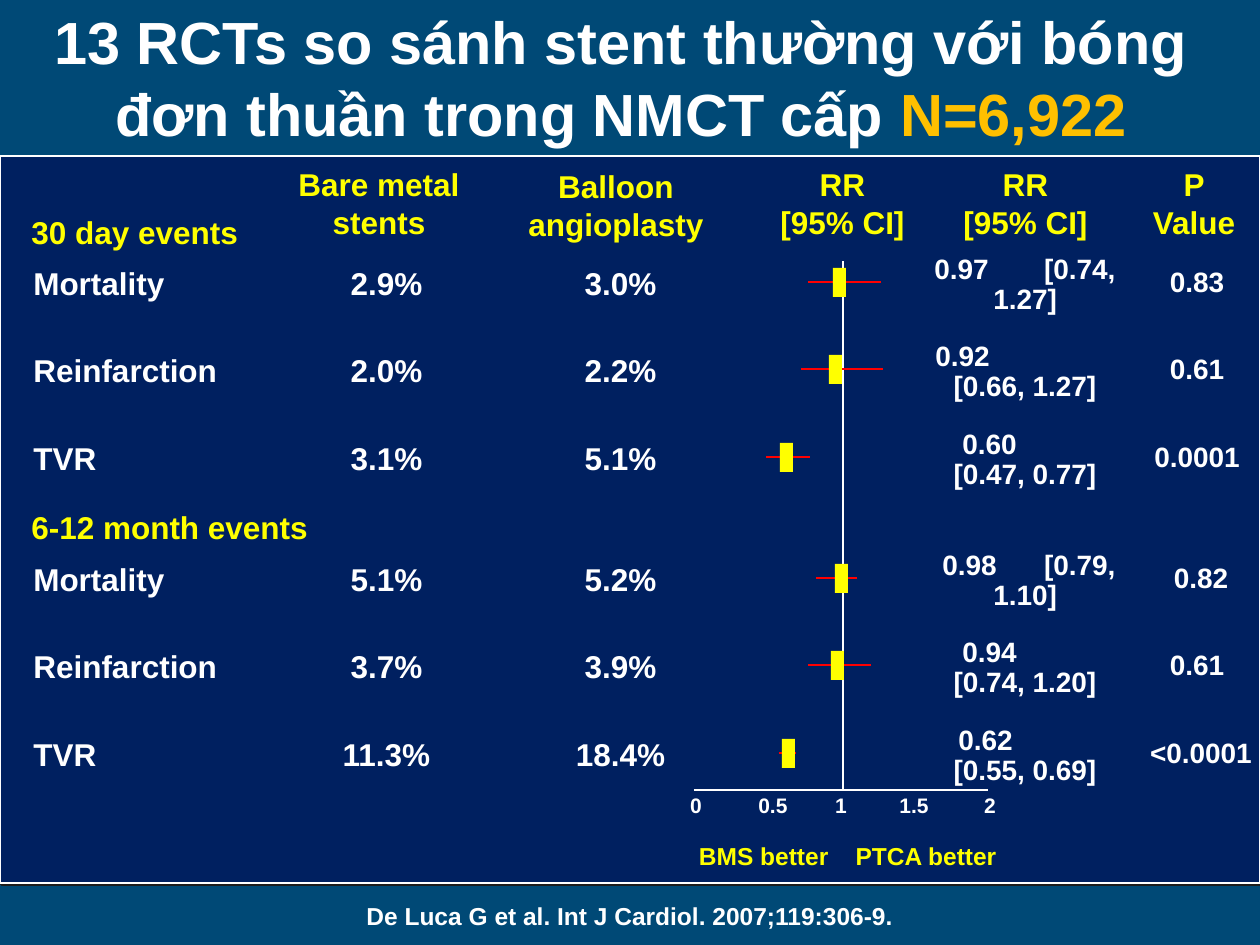
import pptx
import pptx.dml.color
import pptx.enum.shapes
import pptx.enum.text
import pptx.oxml.ns
import pptx.util
from lxml import etree

PX = 914400 // 126
FONT = "Arial"
COLORS = {
    "background": "004976",
    "panel": "002060",
    "shadow": "1C1C1C",
    "white": "FFFFFF",
    "yellow": "FFFF00",
    "gold": "FFC000",
    "red": "FF0000",
}
LEFT = pptx.enum.text.PP_ALIGN.LEFT
CENTER = pptx.enum.text.PP_ALIGN.CENTER
RIGHT = pptx.enum.text.PP_ALIGN.RIGHT
JUSTIFY = pptx.enum.text.PP_ALIGN.JUSTIFY

TITLE = [
    ("13 RCTs so sánh stent thường với bóng đơn thuần trong NMCT cấp ", "white"),
    ("N=6,922", "gold"),
]
HEADERS = [
    (285, 159, 188, ["Bare metal", "stents"]),
    (515, 161, 202, ["Balloon", "angioplasty"]),
    (767, 159, 151, ["RR", "[95% CI]"]),
    (950, 159, 151, ["RR", "[95% CI]"]),
    (1140, 159, 108, ["P", "Value"]),
]
SECTIONS = [
    ("30 day events", 207, 262, [
        ("Mortality", "2.9%", "3.0%", 0, ["0.97 [0.74, 1.27]"], "0.83", 1197, (808, 840, 881)),
        ("Reinfarction", "2.0%", "2.2%", 1, ["0.92", "[0.66, 1.27]"], "0.61", 1197, (801, 836, 883)),
        ("TVR", "3.1%", "5.1%", 28, ["0.60", "[0.47, 0.77]"], "0.0001", 1197, (766, 787, 810)),
    ]),
    ("6-12 month events", 502, 558, [
        ("Mortality", "5.1%", "5.2%", 8, ["0.98 [0.79, 1.10]"], "0.82", 1201, (816, 842, 857)),
        ("Reinfarction", "3.7%", "3.9%", 28, ["0.94", "[0.74, 1.20]"], "0.61", 1197, (808, 838, 871)),
        ("TVR", "11.3%", "18.4%", 24, ["0.62", "[0.55, 0.69]"], "<0.0001", 1201, (779, 789, 796)),
    ]),
]
AXIS_TICKS = [("0", 696), ("0.5", 773), ("1", 841), ("1.5", 914), ("2", 990)]


def px(*lengths):
    return [length * PX for length in lengths]


def rgb(color):
    return pptx.dml.color.RGBColor.from_string(COLORS[color])


def add_run(paragraph, words, size, color):
    run = paragraph.add_run()
    run.text = words
    run.font.name = FONT
    run.font.size = pptx.util.Pt(size)
    run.font.bold = True
    run.font.color.rgb = rgb(color)


def add_text(slide, left, top, width, height, lines, size, color="white",
             align=CENTER, wrap=False, spacing=1.0):
    box = slide.shapes.add_textbox(*px(left, top, width, height))
    frame = box.text_frame
    frame.word_wrap = wrap
    frame.auto_size = pptx.enum.text.MSO_AUTO_SIZE.SHAPE_TO_FIT_TEXT
    for index, line in enumerate(lines):
        paragraph = frame.add_paragraph() if index else frame.paragraphs[0]
        paragraph.alignment = align
        paragraph.line_spacing = spacing
        add_run(paragraph, line, size, color)
    return frame


def add_line(slide, x1, y1, x2, y2, color):
    line = slide.shapes.add_connector(
        pptx.enum.shapes.MSO_CONNECTOR.STRAIGHT, *px(x1, y1, x2, y2))
    line.line.color.rgb = rgb(color)
    line.line.width = pptx.util.Pt(0.75)
    etree.SubElement(line._element.spPr, pptx.oxml.ns.qn("a:effectLst"))


def add_rect(slide, left, top, width, height, color):
    rect = slide.shapes.add_shape(
        pptx.enum.shapes.MSO_SHAPE.RECTANGLE, *px(left, top, width, height))
    rect.shadow.inherit = False
    rect.fill.solid()
    rect.fill.fore_color.rgb = rgb(color)
    rect.line.fill.background()
    return rect


def add_panel(slide):
    panel = add_rect(slide, 0, 156, 1260, 727, "panel")
    panel.line.color.rgb = rgb("white")
    panel.line.width = pptx.util.Pt(1.5)
    qn = pptx.oxml.ns.qn
    effects = panel._element.spPr.find(qn("a:effectLst"))
    shadow = etree.SubElement(effects, qn("a:outerShdw"), dist="17780", dir="2700000")
    etree.SubElement(shadow, qn("a:srgbClr"), val=COLORS["shadow"])


def fill_title(slide):
    title = slide.shapes.title
    title.left, title.top, title.width, title.height = px(0, -1, 1242, 157)
    frame = title.text_frame
    frame.word_wrap = True
    frame.auto_size = pptx.enum.text.MSO_AUTO_SIZE.NONE
    frame.vertical_anchor = pptx.enum.text.MSO_ANCHOR.TOP
    paragraph = frame.paragraphs[0]
    paragraph.alignment = CENTER
    for words, color in TITLE:
        add_run(paragraph, words, 34, color)


def add_estimate(slide, top, indent, lines):
    frame = add_text(slide, 922, top, 206, 74, lines, 16, wrap=True, spacing=0.9)
    ratio = frame.paragraphs[0]
    wraps_interval = len(lines) == 1
    ratio.alignment = JUSTIFY if wraps_interval else LEFT
    margin = 59 if wraps_interval else indent
    properties = ratio._p.get_or_add_pPr()
    properties.set("marL", str(margin * PX))
    properties.set("indent", str((indent - margin) * PX))


def add_event(slide, top, event):
    name, stent, balloon, indent, estimate, p_value, p_center, interval = event
    add_text(slide, 21, top, 328, 47, [name], 18, align=LEFT, wrap=True, spacing=0.9)
    for left, rate in ((234, stent), (468, balloon)):
        add_text(slide, left, top, 305, 47, [rate], 18, wrap=True, spacing=0.9)
    add_estimate(slide, top - 13, indent, estimate)
    add_text(slide, p_center - 73, top, 146, 43, [p_value], 16, spacing=0.9)
    low, center, high = interval
    add_line(slide, low, top + 20, high, top + 20, "red")
    add_rect(slide, center - 7, top + 6, 13, 29, "yellow")


def add_axis(slide):
    add_line(slide, 694, 790, 988, 790, "white")
    add_line(slide, 843, 790, 843, 261, "white")
    for label, center in AXIS_TICKS:
        add_text(slide, center - 32, 786, 64, 38, [label], 12)
    for left, width, label in ((685, 156, "BMS better"), (841, 168, "PTCA better")):
        add_text(slide, left, 835, width, 43, [label], 14, "yellow", RIGHT)


def main():
    deck = pptx.Presentation()
    deck.slide_width, deck.slide_height = px(1260, 945)
    slide = deck.slides.add_slide(deck.slide_layouts[5])
    slide.background.fill.solid()
    slide.background.fill.fore_color.rgb = rgb("background")
    fill_title(slide)
    add_panel(slide)
    for left, top, width, lines in HEADERS:
        add_text(slide, left, top, width, 89, lines, 18, "yellow")
    add_axis(slide)
    for heading, heading_top, first_top, events in SECTIONS:
        add_text(slide, 19, heading_top, 305, 50, [heading], 18, "yellow", LEFT, wrap=True)
        for row, event in enumerate(events):
            add_event(slide, first_top + row * 175 // 2, event)
    add_text(slide, 353, 895, 554, 43,
             ["De Luca G et al. Int J Cardiol. 2007;119:306-9."], 14)
    deck.save("out.pptx")


if __name__ == "__main__":
    main()
